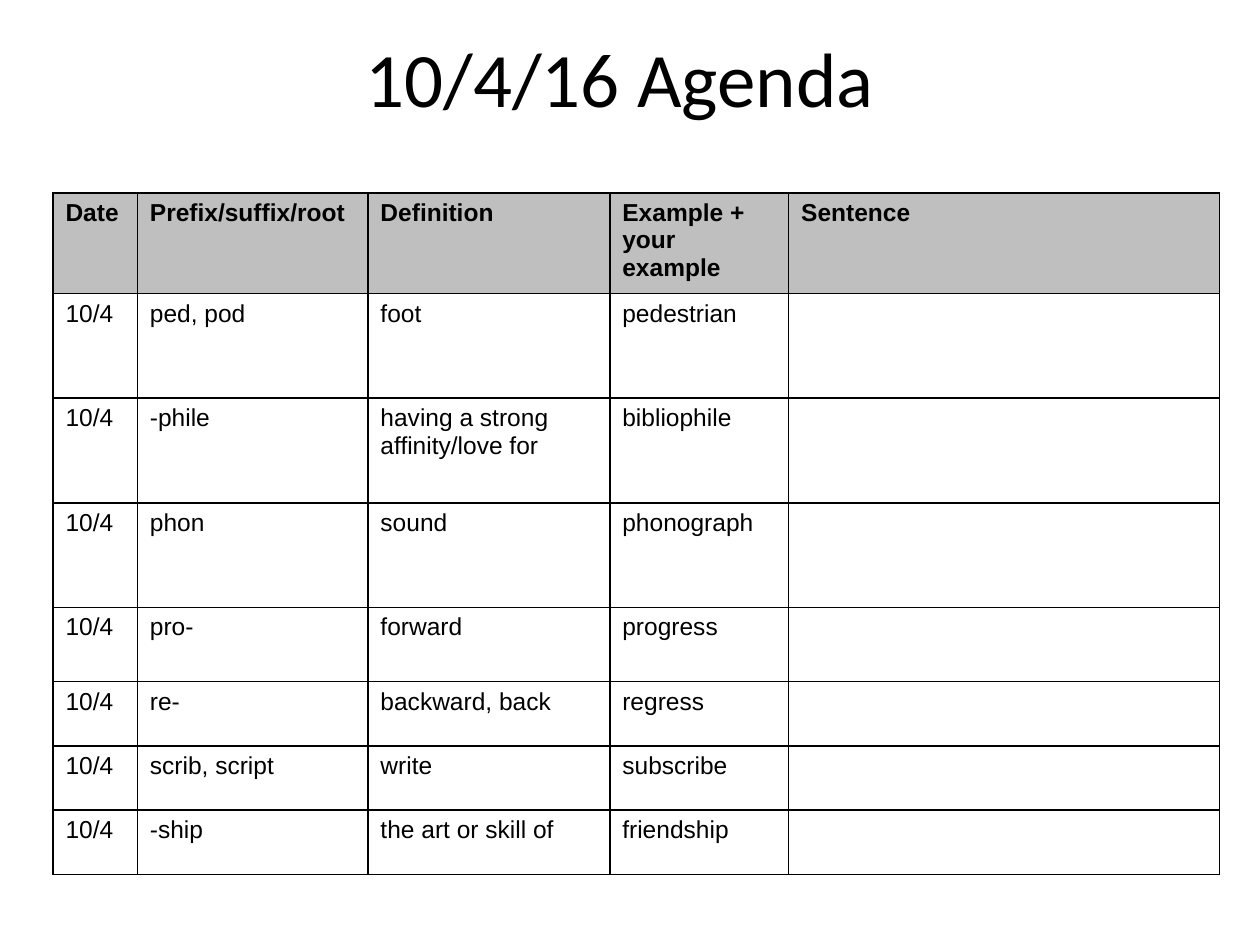
import dataclasses

import lxml.etree
import pptx
import pptx.dml.color
import pptx.enum.text
import pptx.oxml.ns
import pptx.util

Inches = pptx.util.Inches


@dataclasses.dataclass
class Theme:
    ink: str = "000000"
    head: str = "BFBFBF"
    paper: str = "FFFFFF"
    title: int = 44
    cell: int = 14
    rule: int = 1


def rgb(code):
    return pptx.dml.color.RGBColor.from_string(code)


def apply(target, values):
    for name, value in values.items():
        setattr(target, name, value)


class Page:
    def __init__(self, slide, theme):
        self.slide = slide
        self.theme = theme
        slide.background.fill.solid()
        slide.background.fill.fore_color.rgb = rgb(theme.paper)

    def label(self, para, text, **style):
        run = para.add_run()
        run.text = text
        apply(run.font, style)
        run.font.color.rgb = rgb(self.theme.ink)

    def title(self, text, box):
        frame = self.slide.shapes.add_textbox(*map(Inches, box)).text_frame
        apply(frame, {"word_wrap": True,
                      "vertical_anchor": pptx.enum.text.MSO_ANCHOR.MIDDLE})
        para = frame.paragraphs[0]
        para.alignment = pptx.enum.text.PP_ALIGN.CENTER
        self.label(para, text, name="Calibri",
                   size=pptx.util.Pt(self.theme.title))

    def border(self, cell):
        """Rule all four sides of a cell."""
        props = cell._tc.get_or_add_tcPr()
        qn = pptx.oxml.ns.qn
        for spot, side in enumerate("LRTB"):
            line = lxml.etree.Element(qn(f"a:ln{side}"))
            line.set("w", str(pptx.util.Pt(self.theme.rule)))
            fill = lxml.etree.SubElement(line, qn("a:solidFill"))
            lxml.etree.SubElement(fill, qn("a:srgbClr")).set("val", self.theme.ink)
            props.insert(spot, line)

    def table(self, rows, left, top, widths, heights):
        table = self.slide.shapes.add_table(
            len(rows), len(widths), Inches(left), Inches(top),
            Inches(sum(widths)), Inches(sum(heights))).table
        apply(table, {"first_row": False, "horz_banding": False})
        for col, width in zip(table.columns, widths):
            col.width = Inches(width)
        for row, height in zip(table.rows, heights):
            row.height = Inches(height)
        for r, row in enumerate(rows):
            for cell, text in zip(table.rows[r].cells, row):
                if r == 0:
                    cell.fill.solid()
                    cell.fill.fore_color.rgb = rgb(self.theme.head)
                else:
                    cell.fill.background()
                self.border(cell)
                if text:
                    self.label(cell.text_frame.paragraphs[0], text, name="Arial",
                               size=pptx.util.Pt(self.theme.cell), bold=r == 0)


HEADS = ("Date", "Prefix/suffix/root", "Definition",
         "Example + your example", "Sentence")
ROOTS = (
    ("ped, pod", "foot", "pedestrian"),
    ("-phile", "having a strong affinity/love for", "bibliophile"),
    ("phon", "sound", "phonograph"),
    ("pro-", "forward", "progress"),
    ("re-", "backward, back", "regress"),
    ("scrib, script", "write", "subscribe"),
    ("-ship", "the art or skill of", "friendship"),
)


def main():
    deck = pptx.Presentation()
    apply(deck, {"slide_width": Inches(10), "slide_height": Inches(7.5)})
    page = Page(deck.slides.add_slide(deck.slide_layouts[6]), Theme())
    page.title("10/4/16 Agenda", (0.67, 0.3, 8.5, 0.61))
    rows = [HEADS] + [("10/4", *root, "") for root in ROOTS]
    page.table(rows, 0.42, 1.53, (0.67, 1.83, 1.92, 1.42, 3.42),
               [0.76] + [0.83] * 3 + [0.59] + [0.51] * 3)
    deck.save("out.pptx")


if __name__ == "__main__":
    main()
